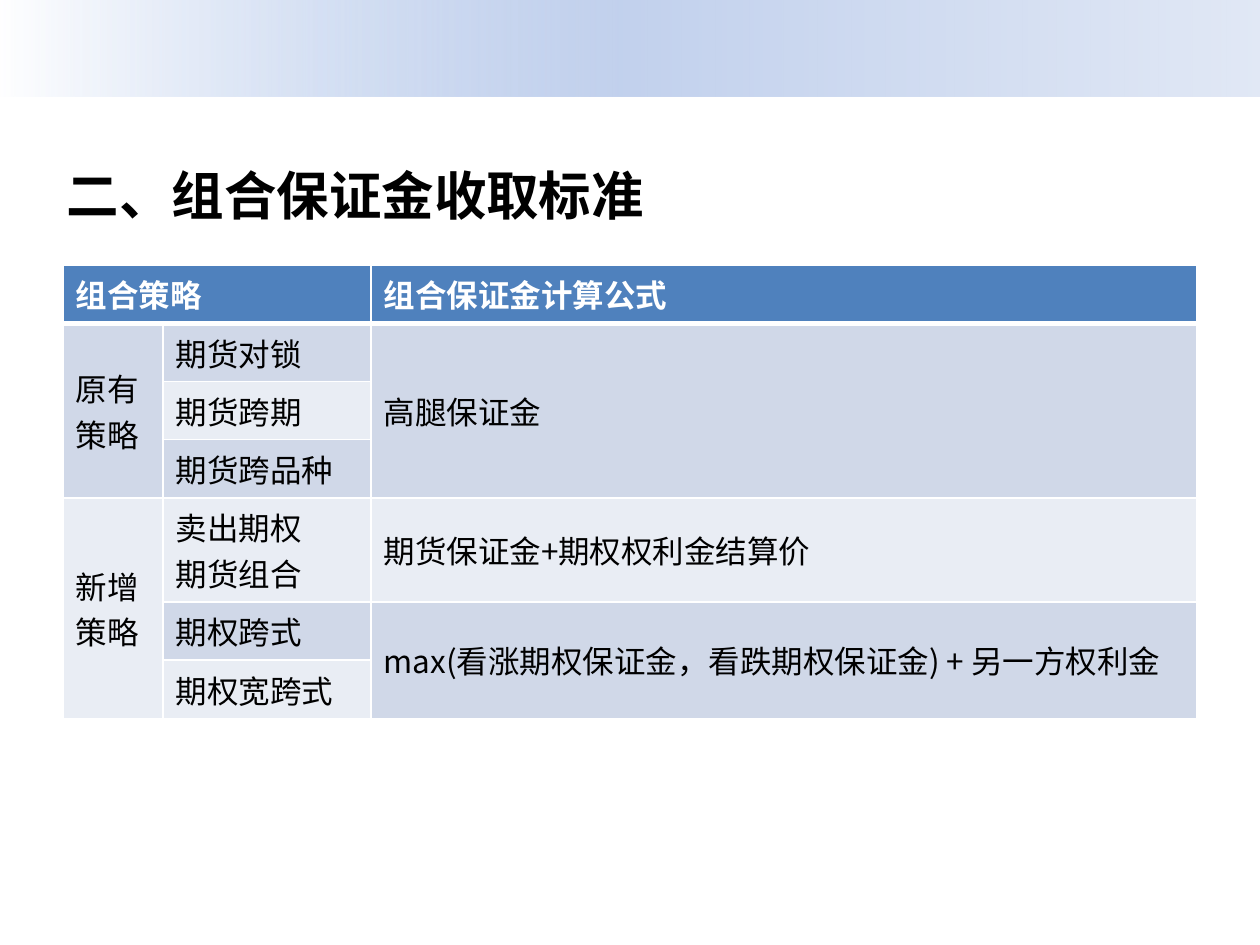
from lxml import etree
from pptx import Presentation, util as u
from pptx.dml.color import RGBColor
from pptx.enum import shapes, text
from pptx.oxml import parse_xml
from pptx.oxml.ns import nsdecls, qn

PX = 914400 // 126
FONT = "Noto Sans CJK JP"
COLORS = {
    "header": "4F81BD", "band_dark": "D0D8E8", "band_light": "E9EDF4",
    "white": "FFFFFF", "black": "000000",
    "band_start": "9AB5E4", "band_middle": "C2D1ED", "band_end": "E1E8F5",
}


def style_text(frame, size, color, bold):
    frame.vertical_anchor = text.MSO_ANCHOR.MIDDLE
    for paragraph in frame.paragraphs:
        paragraph.alignment = text.PP_ALIGN.LEFT
        for run in paragraph.runs:
            values = {"size": u.Pt(size), "bold": bold, "name": FONT}
            for key, value in values.items():
                setattr(run.font, key, value)
            run.font.color.rgb = RGBColor.from_string(COLORS[color])
            etree.SubElement(run.font._element, qn("a:ea"), typeface=FONT)


def border(side, points):
    return parse_xml(
        f'<a:{side} {nsdecls("a")} w="{u.Pt(points)}"><a:solidFill>'
        f'<a:srgbClr val="{COLORS["white"]}"/></a:solidFill></a:{side}>')


prs = Presentation()
prs.slide_width, prs.slide_height = 1260 * PX, 945 * PX
slide = prs.slides.add_slide(prs.slide_layouts[5])

banner = slide.shapes.add_shape(
    shapes.MSO_SHAPE.RECTANGLE, 0, 0, 1260 * PX, 96 * PX)
banner.shadow.inherit = False
banner.line.fill.background()
banner.fill.gradient()
banner.fill.gradient_angle = 0
stops = banner._element.spPr.find(qn("a:gradFill")).find(qn("a:gsLst"))
for old_stop in list(stops):
    stops.remove(old_stop)
for position, color, alpha in [(0, "band_start", 0), (50, "band_middle", 100),
                               (100, "band_end", 100)]:
    stop = etree.SubElement(stops, qn("a:gs"), pos=str(position * 1000))
    shade = etree.SubElement(stop, qn("a:srgbClr"), val=COLORS[color])
    if alpha < 100:
        etree.SubElement(shade, qn("a:alpha"), val=str(alpha * 1000))

title = slide.shapes.title
for key, value in {"left": 54, "top": 116, "width": 1134, "height": 158}.items():
    setattr(title, key, value * PX)
title.text_frame.text = "二、组合保证金收取标准"
style_text(title.text_frame, 30, "black", True)

rows = [
    ("组合策略", "", "组合保证金计算公式"),
    ("原有策略", "期货对锁", "高腿保证金"),
    ("", "期货跨期", ""),
    ("", "期货跨品种", ""),
    ("新增策略", "卖出期权\n期货组合", "期货保证金+期权权利金结算价"),
    ("", "期权跨式", "max(看涨期权保证金，看跌期权保证金) + 另一方权利金"),
    ("", "期权宽跨式", ""),
]
row_heights = [58, 58, 58, 58, 104, 58, 58]
column_widths = [100, 208, 826]
margins = slide.shapes.add_table(
    len(rows), len(column_widths), 63 * PX, 265 * PX,
    sum(column_widths) * PX, sum(row_heights) * PX).table
for column, width in zip(margins.columns, column_widths):
    column.width = width * PX
for row, height in zip(margins.rows, row_heights):
    row.height = height * PX

for r, labels in enumerate(rows):
    fill = "header" if r == 0 else "band_dark" if r % 2 else "band_light"
    for c, label in enumerate(labels):
        cell = margins.cell(r, c)
        cell.text = label
        style_text(cell.text_frame, 18, "black" if r else "white", r == 0)
        cell.vertical_anchor = text.MSO_ANCHOR.MIDDLE
        cell.fill.solid()
        cell.fill.fore_color.rgb = RGBColor.from_string(COLORS[fill])
        edges = {"lnL": 1, "lnR": 1, "lnT": 3 if r == 1 else 1,
                 "lnB": 3 if r == 0 else 1}
        for index, (side, points) in enumerate(edges.items()):
            cell._tc.tcPr.insert(index, border(side, points))

for first, last in [((0, 0), (0, 1)), ((1, 0), (3, 0)), ((1, 2), (3, 2)),
                    ((4, 0), (6, 0)), ((5, 2), (6, 2))]:
    margins.cell(*first).merge(margins.cell(*last))

prs.save("out.pptx")
